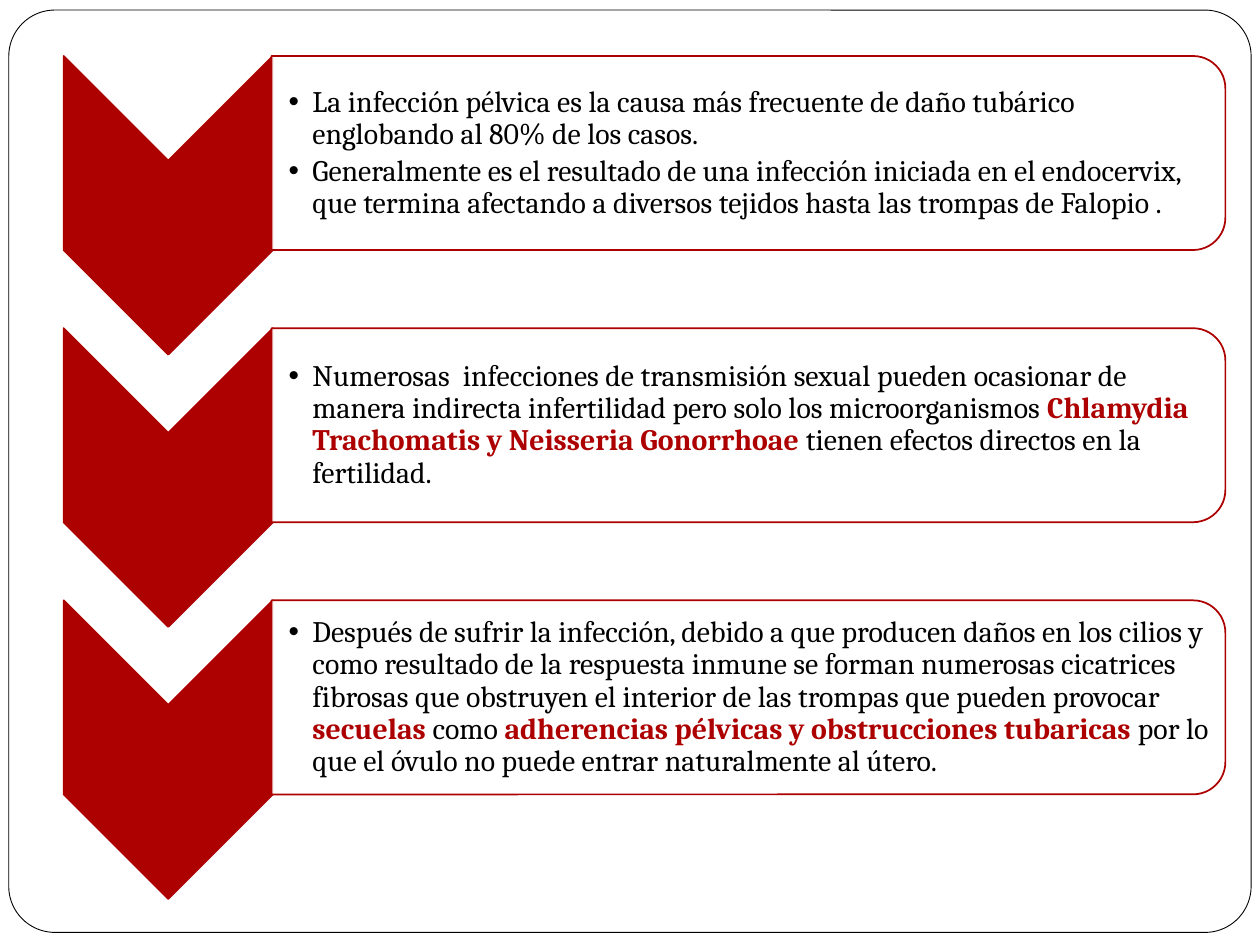
from dataclasses import dataclass

from lxml.etree import SubElement
from pptx import Presentation
from pptx.dml.color import RGBColor
from pptx.enum.shapes import MSO_SHAPE
from pptx.enum.text import MSO_ANCHOR
from pptx.oxml.ns import qn
from pptx.util import Inches, Pt

RED = "AD0101"
BLACK = "000000"
WHITE = "FFFFFF"
FIRST_TOP = 0.52
STEP_PITCH = 2.16


@dataclass(frozen=True)
class Span:
    text: str
    strong: bool = False


@dataclass(frozen=True)
class Frame:
    left: float
    top: float
    width: float
    height: float

    def lengths(self):
        return [Inches(value) for value in (self.left, self.top, self.width, self.height)]


STEPS = [
    [
        [Span("La infección pélvica es la causa más frecuente de daño tubárico "
              "englobando al 80% de los casos.")],
        [Span("Generalmente es el resultado de una infección iniciada en el endocervix, "
              "que termina afectando a diversos tejidos hasta las trompas de Falopio .")],
    ],
    [
        [
            Span("Numerosas  infecciones de transmisión sexual pueden ocasionar de manera "
                 "indirecta infertilidad pero solo los microorganismos "),
            Span("Chlamydia Trachomatis y Neisseria Gonorrhoae ", True),
            Span("tienen efectos directos en la fertilidad."),
        ],
    ],
    [
        [
            Span("Después de sufrir la infección, debido a que producen daños en los cilios y "
                 "como resultado de la respuesta inmune se forman numerosas cicatrices fibrosas "
                 "que obstruyen el interior de las trompas que pueden provocar "),
            Span("secuelas ", True),
            Span("como "),
            Span("adherencias pélvicas y obstrucciones tubaricas ", True),
            Span("por lo que el óvulo no puede entrar naturalmente al útero."),
        ],
    ],
]


def paint(color_format, color: str) -> None:
    color_format.rgb = RGBColor.from_string(color)


def apply_format(target, values: dict) -> None:
    for name, value in values.items():
        setattr(target, name, value)


def add_outline(page, kind, frame: Frame, fill: str, line: str, weight: float, rotation: int = 0):
    shape = page.shapes.add_shape(kind, *frame.lengths())
    shape.shadow.inherit = False
    shape.rotation = rotation
    shape.fill.solid()
    paint(shape.fill.fore_color, fill)
    paint(shape.line.color, line)
    shape.line.width = Pt(weight)
    return shape


def add_bullet(para) -> None:
    properties = para._p.get_or_add_pPr()
    properties.set("marL", str(Inches(0.19)))
    properties.set("indent", str(Inches(-0.19)))
    SubElement(properties, qn("a:buFont"), typeface="Arial")
    SubElement(properties, qn("a:buChar"), char="•")


def add_text(page, frame: Frame, paragraphs: list[list[Span]]) -> None:
    text_frame = page.shapes.add_textbox(*frame.lengths()).text_frame
    apply_format(text_frame, {
        "word_wrap": True,
        "vertical_anchor": MSO_ANCHOR.MIDDLE,
        "margin_left": Inches(0.13),
        "margin_top": Inches(0.01),
        "margin_right": Inches(0.01),
        "margin_bottom": Inches(0.01),
    })
    for index, spans in enumerate(paragraphs):
        para = text_frame.add_paragraph() if index else text_frame.paragraphs[0]
        apply_format(para, {"level": 1, "line_spacing": 0.9, "space_after": Pt(2.55)})
        add_bullet(para)
        for span in spans:
            run = para.add_run()
            run.text = span.text
            apply_format(run.font, {"name": "Cambria", "size": Pt(17), "bold": span.strong})
            paint(run.font.color, RED if span.strong else BLACK)


def add_step(page, top: float, paragraphs: list[list[Span]]) -> None:
    add_outline(page, MSO_SHAPE.CHEVRON, Frame(0.15, top + 0.28, 2.37, 1.66), RED, RED, 1, 90)
    panel = add_outline(page, MSO_SHAPE.ROUND_2_SAME_RECTANGLE,
                        Frame(5.17, top - 3.09, 1.54, 7.57), WHITE, RED, 1, 90)
    color = panel.fill._xPr.find(qn("a:solidFill"))[0]
    SubElement(color, qn("a:alpha"), val="90000")
    add_text(page, Frame(2.16, top, 7.49, 1.39), paragraphs)


def main() -> None:
    deck = Presentation()
    deck.slide_width, deck.slide_height = Inches(10), Inches(7.5)
    page = deck.slides.add_slide(deck.slide_layouts[6])
    border = add_outline(page, MSO_SHAPE.ROUNDED_RECTANGLE,
                         Frame(0.07, 0.08, 9.86, 7.32), WHITE, BLACK, 0.5)
    border.adjustments[0] = 0.05
    for index, paragraphs in enumerate(STEPS):
        add_step(page, FIRST_TOP + index * STEP_PITCH, paragraphs)
    deck.save("out.pptx")


if __name__ == "__main__":
    main()
